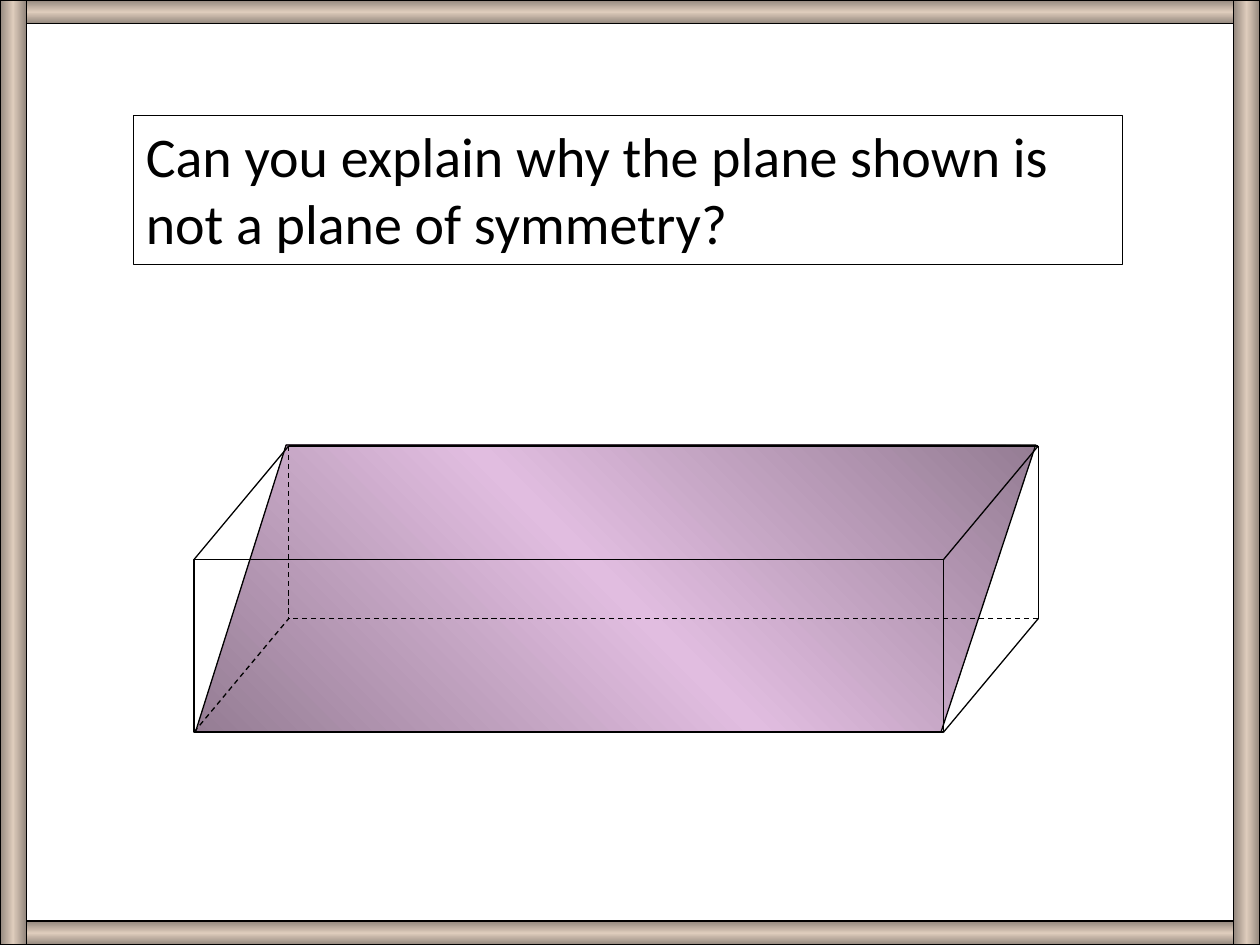
"""Build a slide asking why a slanted plane in a cuboid is not a plane of symmetry."""
from copy import deepcopy

from pptx import Presentation
from pptx.dml.color import RGBColor
from pptx.enum.dml import MSO_LINE
from pptx.enum.shapes import MSO_CONNECTOR, MSO_SHAPE
from pptx.enum.text import MSO_ANCHOR, MSO_AUTO_SIZE, PP_ALIGN
from pptx.oxml.ns import qn
from pptx.util import Cm, Pt

QUESTION = "Can you explain why the plane shown is not a plane of symmetry?"
QUESTION_BOX = (2.69, 2.33, 19.94, 3.0)
SLIDE_WIDTH, SLIDE_HEIGHT = 25.4, 19.05
RAIL, POST = 0.48, 0.53
FRONT_LEFT, FRONT_TOP, FRONT_WIDTH, FRONT_HEIGHT = 3.91, 11.28, 15.11, 3.48
DEPTH_X, DEPTH_Y = 1.91, 2.29
PLANE = [(3.94, 14.76), (18.97, 14.76), (20.88, 8.97), (5.77, 8.97)]
HIDDEN_EDGES = [("back bottom right", "back bottom left"),
                ("front bottom left", "back bottom left"),
                ("back top left", "back bottom left")]
VISIBLE_EDGES = [("front top left", "back top left"),
                 ("front bottom right", "back bottom right"),
                 ("front top right", "back top right"),
                 ("back top left", "back top right"),
                 ("back top right", "back bottom right")]
THEME = {
    "ink": RGBColor(0x00, 0x00, 0x00),
    "frame": ("93877D", "DECCBC", "93877D"),
    "plane": ("957D94", "E1BDE0", "957D94"),
    "outline": Pt(0.75),
    "question": {"name": "Calibri", "size": Pt(32)},
    "question_frame": {"word_wrap": True, "vertical_anchor": MSO_ANCHOR.TOP,
                       "auto_size": MSO_AUTO_SIZE.SHAPE_TO_FIT_TEXT},
}


def apply(target, values):
    for key, value in values.items():
        setattr(target, key, value)


def outline(part, dash=None):
    part.line.color.rgb = THEME["ink"]
    apply(part.line, {"width": THEME["outline"], "dash_style": dash})


def shade(part, colours, angle):
    part.shadow.inherit = False
    part.fill.gradient()
    stops = part._element.spPr.find(".//" + qn("a:gsLst"))
    stops.append(deepcopy(stops[-1]))
    for stop, colour, position in zip(part.fill.gradient_stops, colours, (0, 0.5, 1)):
        stop.color.rgb = RGBColor.from_string(colour)
        stop.position = position
    part.fill.gradient_angle = angle
    outline(part)


def add_border(shapes):
    for left, top, width, height, angle in [
        (0, 0, SLIDE_WIDTH, RAIL, 90),
        (0, SLIDE_HEIGHT - RAIL, SLIDE_WIDTH, RAIL, 90),
        (0, 0, POST, SLIDE_HEIGHT, 0),
        (SLIDE_WIDTH - POST, 0, POST, SLIDE_HEIGHT, 0),
    ]:
        bar = shapes.add_shape(MSO_SHAPE.RECTANGLE, Cm(left), Cm(top), Cm(width), Cm(height))
        shade(bar, THEME["frame"], angle)


def cuboid_corners():
    return {
        f"{face} {level} {side}": (FRONT_LEFT + across + shift_x, FRONT_TOP + down - shift_y)
        for face, shift_x, shift_y in [("front", 0, 0), ("back", DEPTH_X, DEPTH_Y)]
        for level, down in [("top", 0), ("bottom", FRONT_HEIGHT)]
        for side, across in [("left", 0), ("right", FRONT_WIDTH)]
    }


def add_edges(shapes, edges, dash=None):
    corners = cuboid_corners()
    for start, end in edges:
        points = [Cm(value) for value in corners[start] + corners[end]]
        edge = shapes.add_connector(MSO_CONNECTOR.STRAIGHT, *points)
        outline(edge, dash)
        edge._element.spPr.append(edge._element.spPr.makeelement(qn("a:effectLst")))


def add_cuboid(shapes):
    first, *others = [(Cm(x), Cm(y)) for x, y in PLANE]
    builder = shapes.build_freeform(*first, scale=1.0)
    builder.add_line_segments(others, close=True)
    shade(builder.convert_to_shape(), THEME["plane"], 45)
    add_edges(shapes, HIDDEN_EDGES, MSO_LINE.DASH)
    front = shapes.add_shape(MSO_SHAPE.RECTANGLE, Cm(FRONT_LEFT), Cm(FRONT_TOP),
                             Cm(FRONT_WIDTH), Cm(FRONT_HEIGHT))
    front.shadow.inherit = False
    front.fill.background()
    outline(front)
    add_edges(shapes, VISIBLE_EDGES)


def add_question(shapes):
    question = shapes.add_textbox(*[Cm(value) for value in QUESTION_BOX])
    outline(question)
    apply(question.text_frame, THEME["question_frame"])
    sentence = question.text_frame.paragraphs[0]
    sentence.alignment = PP_ALIGN.LEFT
    words = sentence.add_run()
    words.text = QUESTION
    apply(words.font, THEME["question"])
    words.font.color.rgb = THEME["ink"]


def main():
    deck = Presentation()
    apply(deck, {"slide_width": Cm(SLIDE_WIDTH), "slide_height": Cm(SLIDE_HEIGHT)})
    slide = deck.slides.add_slide(deck.slide_layouts[6])
    add_border(slide.shapes)
    add_cuboid(slide.shapes.add_group_shape().shapes)
    add_question(slide.shapes)
    deck.save("out.pptx")


if __name__ == "__main__":
    main()
